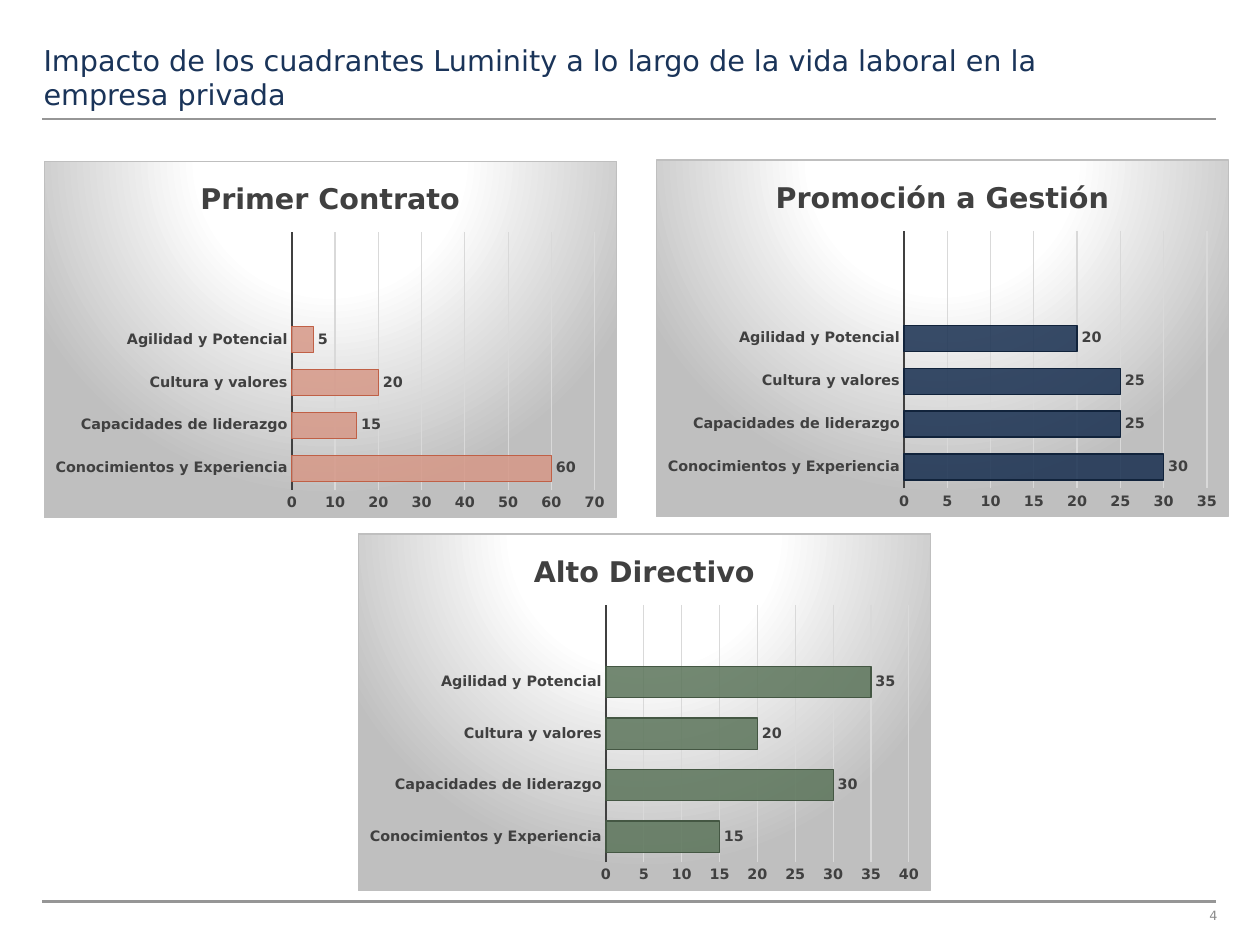
from dataclasses import dataclass
from lxml import etree
from pptx import Presentation
from pptx import util as u
from pptx.chart.data import CategoryChartData
from pptx.dml.color import RGBColor
from pptx.enum import chart as ch, shapes, text
from pptx.oxml import parse_xml
from pptx.oxml.ns import nsdecls, qn


@dataclass
class Theme:
    face: str = "DejaVu Sans"
    navy: str = "1A3459"
    rule: str = "969696"
    page: str = "8C8C8C"
    ink: str = "404040"
    black: str = "000000"
    grid: str = "D9D9D9"
    white: str = "FFFFFF"
    edge: str = "BFBFBF"
    head: int = 18
    base: int = 10
    label: int = 9
    small: int = 8
    thick: float = 1.5
    thin: float = 0.75


def style(font, theme, size, color, bold=False):
    font.name = theme.face
    font.size = u.Pt(size)
    font.bold = bold
    font.color.rgb = RGBColor.from_string(color)


def stroke(line, color, width):
    line.color.rgb = RGBColor.from_string(color)
    line.width = u.Pt(width)


def write(frame, words, *, theme, size, color, bold=False, align=None):
    para = frame.paragraphs[0]
    para.alignment = align
    run = para.add_run()
    run.text = words
    style(run.font, theme, size, color, bold)


class Deck:
    def __init__(self, theme, width, height):
        self.theme = theme
        self.show = Presentation()
        self.show.slide_width = u.Inches(width)
        self.show.slide_height = u.Inches(height)
        self.slide = self.show.slides.add_slide(self.show.slide_layouts[6])

    def text(self, words, box, anchor, **form):
        frame = self.slide.shapes.add_textbox(*map(u.Inches, box)).text_frame
        frame.word_wrap = True
        frame.vertical_anchor = anchor
        frame.margin_left = frame.margin_right = 0
        frame.margin_top = frame.margin_bottom = 0
        write(frame, words, theme=self.theme, **form)

    def rule(self, left, right, top):
        line = self.slide.shapes.add_connector(
            shapes.MSO_CONNECTOR.STRAIGHT,
            *map(u.Inches, (left, top, right, top)))
        stroke(line.line, self.theme.rule, self.theme.thick)
        etree.SubElement(line.element.spPr, qn("a:effectLst"))

    def bars(self, title, box, names, values, fill, edge):
        look = self.theme
        data = CategoryChartData()
        data.categories = names + [""] * (len(values) - len(names))
        data.add_series(title, values)
        chart = self.slide.shapes.add_chart(
            ch.XL_CHART_TYPE.BAR_CLUSTERED, *map(u.Inches, box), data).chart
        style(chart.font, look, look.base, look.black)
        self.panel(chart)
        chart.has_legend = False
        chart.has_title = True
        write(chart.chart_title.text_frame, title, theme=look,
              size=look.head, color=look.ink, bold=True)
        for axis in (chart.category_axis, chart.value_axis):
            axis.major_tick_mark = axis.minor_tick_mark = ch.XL_TICK_MARK.NONE
            style(axis.tick_labels.font, look, look.label, look.ink, True)
        stroke(chart.category_axis.format.line, look.ink, look.thick)
        chart.value_axis.format.line.fill.background()
        chart.value_axis.has_major_gridlines = True
        stroke(chart.value_axis.major_gridlines.format.line, look.grid, look.thin)

        plot = chart.plots[0]
        plot.gap_width = 65
        plot.vary_by_categories = False
        row = plot.series[0]
        row.invert_if_negative = False
        row.format.fill.solid()
        row.format.fill.fore_color.rgb = RGBColor.from_string(fill)
        tint = next(row.format.element.iter(qn("a:srgbClr"))) if hasattr(
            row.format, "element") else next(row._element.iter(qn("a:srgbClr")))
        etree.SubElement(tint, qn("a:alpha"), val="85000")
        stroke(row.format.line, edge, look.thin)
        marks = row.data_labels
        marks.show_value = True
        marks.position = ch.XL_LABEL_POSITION.OUTSIDE_END
        style(marks.font, look, look.label, look.ink, True)

    def panel(self, chart):
        look = self.theme
        steps = ((0, look.white), (39, look.white), (100, look.edge))
        stops = "".join(
            f'<a:gs pos="{spot * 1000}"><a:srgbClr val="{color}"/></a:gs>'
            for spot, color in steps)
        chart.element.find(qn("c:chart")).addnext(parse_xml(
            f'<c:spPr {nsdecls("c", "a")}><a:gradFill><a:gsLst>{stops}</a:gsLst>'
            '<a:path path="circle"><a:fillToRect l="50000" t="-80000" '
            'r="50000" b="180000"/></a:path></a:gradFill>'
            f'<a:ln w="{u.Pt(look.thin)}"><a:solidFill>'
            f'<a:srgbClr val="{look.edge}"/></a:solidFill></a:ln></c:spPr>'))


def main():
    theme = Theme()
    deck = Deck(theme, 10.99, 8.23)
    deck.text("4", (9.86, 7.92, 0.76, 0.13), text.MSO_ANCHOR.MIDDLE,
              size=theme.small, color=theme.page, align=text.PP_ALIGN.RIGHT)
    for top in (1.04, 7.86):
        deck.rule(0.37, 10.61, top)
    deck.text("Impacto de los cuadrantes Luminity a lo largo de la vida laboral "
              "en la empresa privada", (0.38, 0.26, 8.82, 0.71),
              text.MSO_ANCHOR.BOTTOM, size=theme.head, color=theme.navy)

    names = ["Conocimientos y Experiencia", "Capacidades de liderazgo",
             "Cultura y valores", "Agilidad y Potencial"]
    stages = (
        ("Primer Contrato", 0.38, 1.4, (60, 15, 20, 5, None, None),
         "D69887", "C06046"),
        ("Promoción a Gestión", 5.72, 1.39, (30, 25, 25, 20, None, None),
         "172E4F", "11233B"),
        ("Alto Directivo", 3.12, 4.65, (15, 30, 20, 35, None),
         "5B745A", "445743"),
    )
    for title, left, top, values, fill, edge in stages:
        deck.bars(title, (left, top, 5, 3.12), names, values, fill, edge)
    deck.show.save("out.pptx")


if __name__ == "__main__":
    main()
